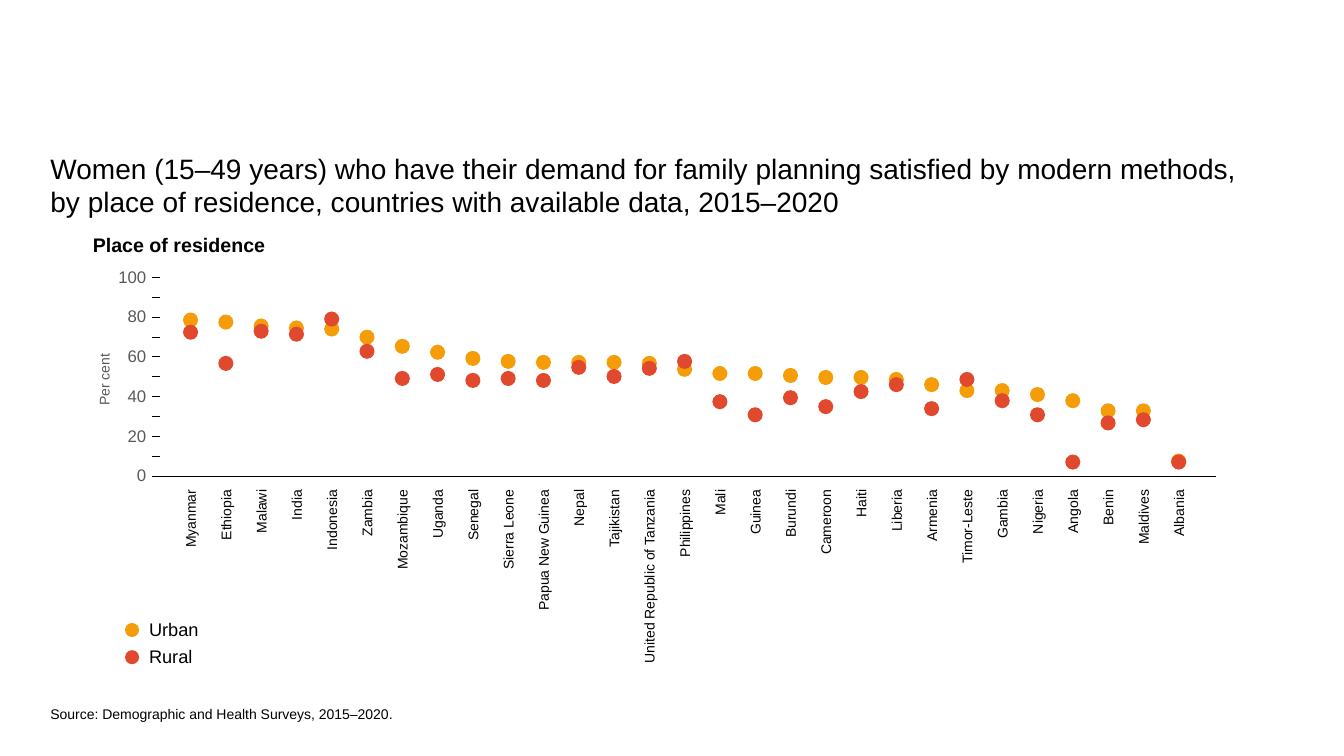
from lxml import etree
from pptx import Presentation
from pptx.dml.color import RGBColor
from pptx.enum.shapes import MSO_CONNECTOR as MC, MSO_SHAPE as MS
from pptx.enum.text import MSO_ANCHOR as MA, PP_ALIGN as PA
from pptx.oxml.ns import qn
from pptx.util import Inches, Pt

TITLE = ["Women (15–49 years) who have their demand for family planning satisfied by modern methods,",
         "by place of residence, countries with available data, 2015–2020"]
HEADING = "Place of residence"
SOURCE = "Source: Demographic and Health Surveys, 2015–2020."
AXIS_TITLE = "Per cent"
SERIES = {"Urban": "F59D08", "Rural": "E1492E"}
DATA = [  # country, label length in inches, urban, rural
    ("Myanmar", 0.58, 78.4, 72.3), ("Ethiopia", 0.5, 77.4, 56.6),
    ("Malawi", 0.43, 75.4, 72.8), ("India", 0.29, 74.4, 71.3),
    ("Indonesia", 0.59, 73.9, 78.9), ("Zambia", 0.46, 69.8, 62.7),
    ("Mozambique", 0.79, 65.2, 49), ("Uganda", 0.48, 62.2, 51),
    ("Senegal", 0.5, 59.1, 48), ("Sierra Leone", 0.78, 57.6, 49),
    ("Papua New Guinea", 1.19, 57.1, 48), ("Nepal", 0.36, 57.1, 54.6),
    ("Tajikistan", 0.58, 57.1, 50), ("United Republic of Tanzania", 1.71, 56.6, 54.1),
    ("Philippines", 0.66, 53.6, 57.6), ("Mali", 0.25, 51.5, 37.3),
    ("Guinea", 0.44, 51.5, 30.7), ("Burundi", 0.47, 50.5, 39.3),
    ("Cameroon", 0.64, 49.5, 34.8), ("Haiti", 0.27, 49.5, 42.4),
    ("Liberia", 0.41, 48.5, 45.9), ("Armenia", 0.51, 45.9, 33.8),
    ("Timor-Leste", 0.73, 42.9, 48.5), ("Gambia", 0.48, 42.9, 37.8),
    ("Nigeria", 0.43, 40.9, 30.7), ("Angola", 0.42, 37.8, 6.9),
    ("Benin", 0.35, 32.7, 26.6), ("Maldives", 0.54, 32.7, 28.2),
    ("Albania", 0.45, 7.4, 6.9),
]
FONT, BLACK, GREY = "Arial", "000000", "595959"

# Inches
FIRST_X, COLUMN = 1.89, 0.35
AXIS_X, AXIS_END, TICK = 1.51, 12.06, 0.08
AXIS_TOP, AXIS_H = 2.75, 1.97
LABEL_TOP, LABEL_W = 4.86, 0.17
DOT, LEGEND_DOT = 0.15, 0.14
LEGEND_X, LEGEND_Y, LEGEND_ROW = 1.31, 6.25, 0.27

prs = Presentation()
prs.slide_width, prs.slide_height = Inches(13.33), Inches(7.5)
slide = prs.slides.add_slide(prs.slide_layouts[6])


def rgb(color):
    return RGBColor.from_string(color)


def value_y(value):
    return AXIS_TOP + AXIS_H * (1 - value / 100)


def add_text(lines, x, y, w, h, size, color=BLACK, bold=False, align=PA.LEFT,
             anchor=MA.TOP, insets=(0, 0), spacing=None, wrap=False, upward=False):
    tf = slide.shapes.add_textbox(*map(Inches, (x, y, w, h))).text_frame
    tf.word_wrap, tf.vertical_anchor = wrap, anchor
    tf.margin_left = tf.margin_right = Inches(insets[0])
    tf.margin_top = tf.margin_bottom = Inches(insets[1])
    if upward:
        tf._txBody.bodyPr.set("vert", "vert270")
    tf.text = "\n".join(lines)
    for p in tf.paragraphs:
        p.alignment = align
        if spacing:
            p.line_spacing = Pt(spacing)
        font = p.runs[0].font
        font.name, font.size, font.bold = FONT, Pt(size), bold
        font.color.rgb = rgb(color)


def add_line(x1, x2, y):
    line = slide.shapes.add_connector(MC.STRAIGHT, *map(Inches, (x1, y, x2, y)))
    line.line.width = Pt(0.25)
    line.line.color.rgb = rgb(BLACK)
    etree.SubElement(line._element.spPr, qn("a:effectLst"))


def add_dot(cx, cy, size, color):
    sp = slide.shapes.add_shape(
        MS.OVAL, *map(Inches, (cx - size / 2, cy - size / 2, size, size)))
    sp.shadow.inherit = False
    sp.fill.solid()
    sp.fill.fore_color.rgb = rgb(color)
    sp.line.fill.background()


def add_axes():
    for tick in range(10, 101, 10):
        add_line(AXIS_X, AXIS_X + TICK, value_y(tick))
    add_line(AXIS_X, AXIS_END, value_y(0))
    for tick in range(0, 101, 20):
        w = 0.2 + 0.093 * len(str(tick))
        add_text([str(tick)], 1.55 - w, value_y(tick) - 0.15, w, 0.3, 12, GREY,
                 align=PA.RIGHT, insets=(0.1, 0.05), spacing=14)
    add_text([AXIS_TITLE], 0.92, 3.51, 0.18, 0.52, 10, GREY,
             align=PA.RIGHT, spacing=14, upward=True)


def add_countries():
    for i, (country, length, *values) in enumerate(DATA):
        x = FIRST_X + COLUMN * i
        add_text([country], x - LABEL_W / 2, LABEL_TOP, LABEL_W, length, 10,
                 align=PA.RIGHT, upward=True)
        for value, color in zip(values, SERIES.values()):
            add_dot(x, value_y(value), DOT, color)


def add_legend():
    for i, (name, color) in enumerate(SERIES.items()):
        y = LEGEND_Y + LEGEND_ROW * i
        add_dot(LEGEND_X, y, LEGEND_DOT, color)
        add_text([name], LEGEND_X + LEGEND_DOT / 2, y - 0.15, 0.7, 0.3, 13,
                 anchor=MA.MIDDLE, insets=(0.1, 0.05), spacing=14)


add_text(TITLE, 0.5, 1.5, 12.83, 4.8, 20, wrap=True)
add_text([HEADING], 0.92, 2.3, 1.82, 0.3, 14, bold=True, anchor=MA.MIDDLE,
         insets=(0, 0.05), spacing=14)
add_axes()
add_countries()
add_legend()
add_text([SOURCE], 0.5, 7, 3.41, 0.17, 10, wrap=True)
prs.save("out.pptx")
